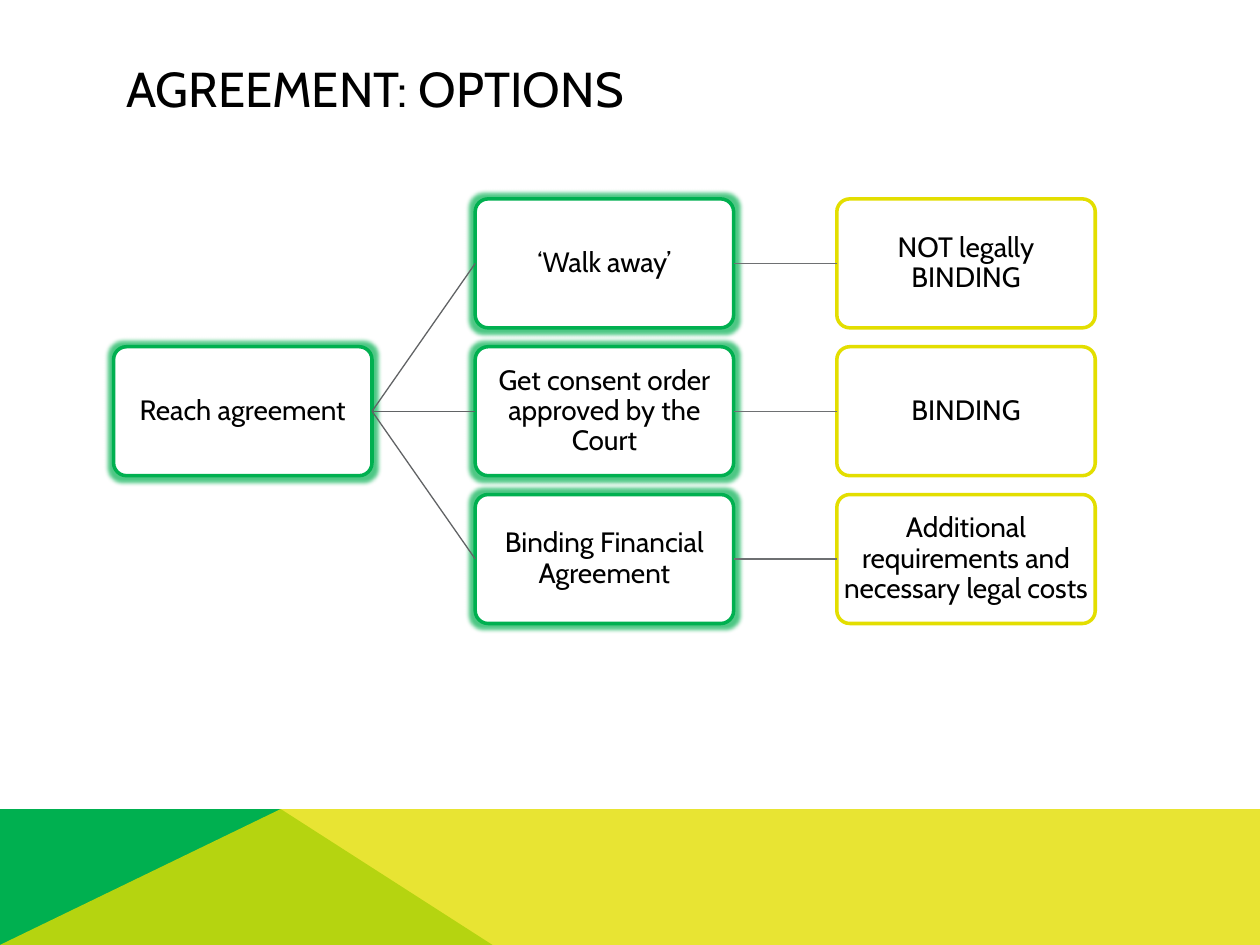
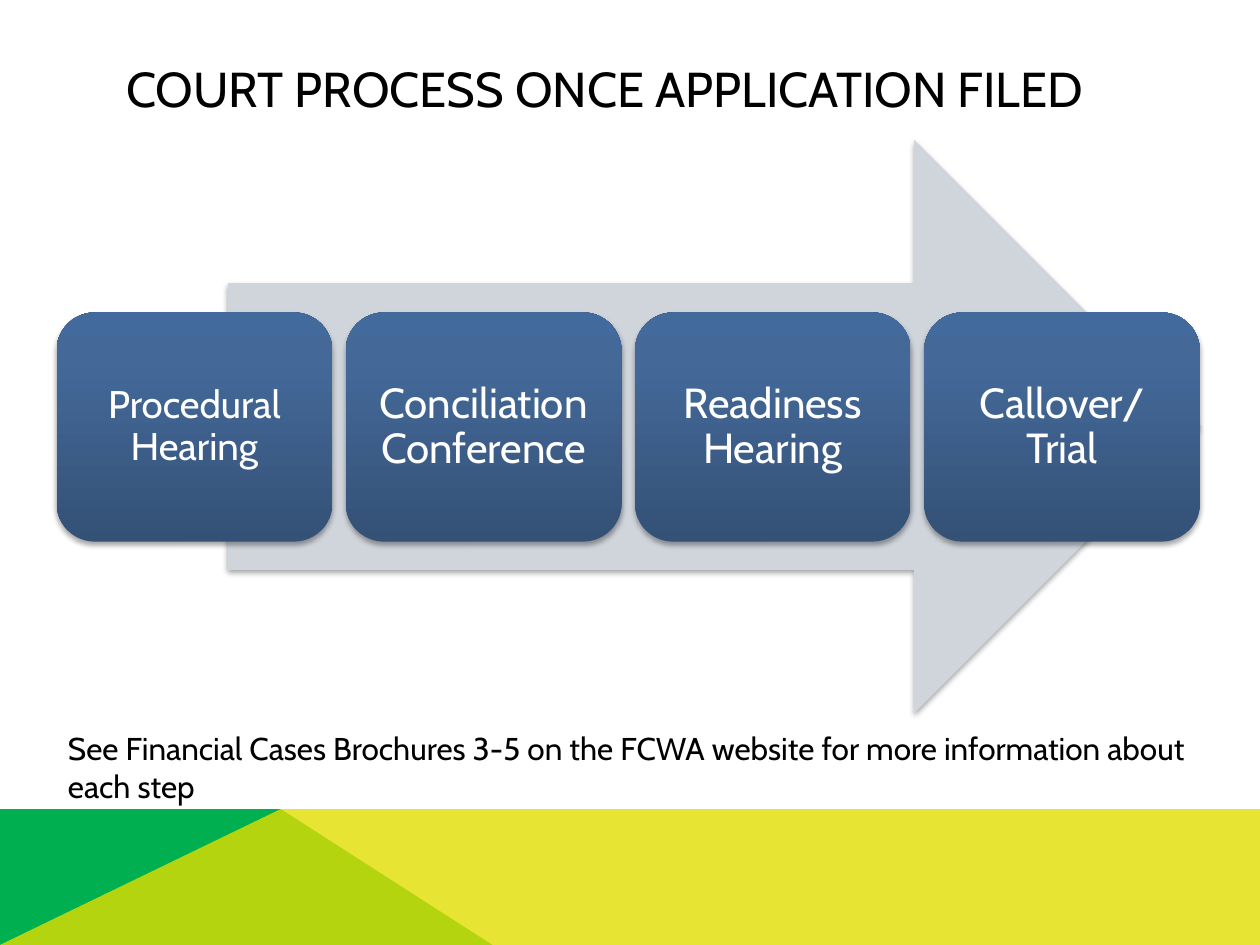
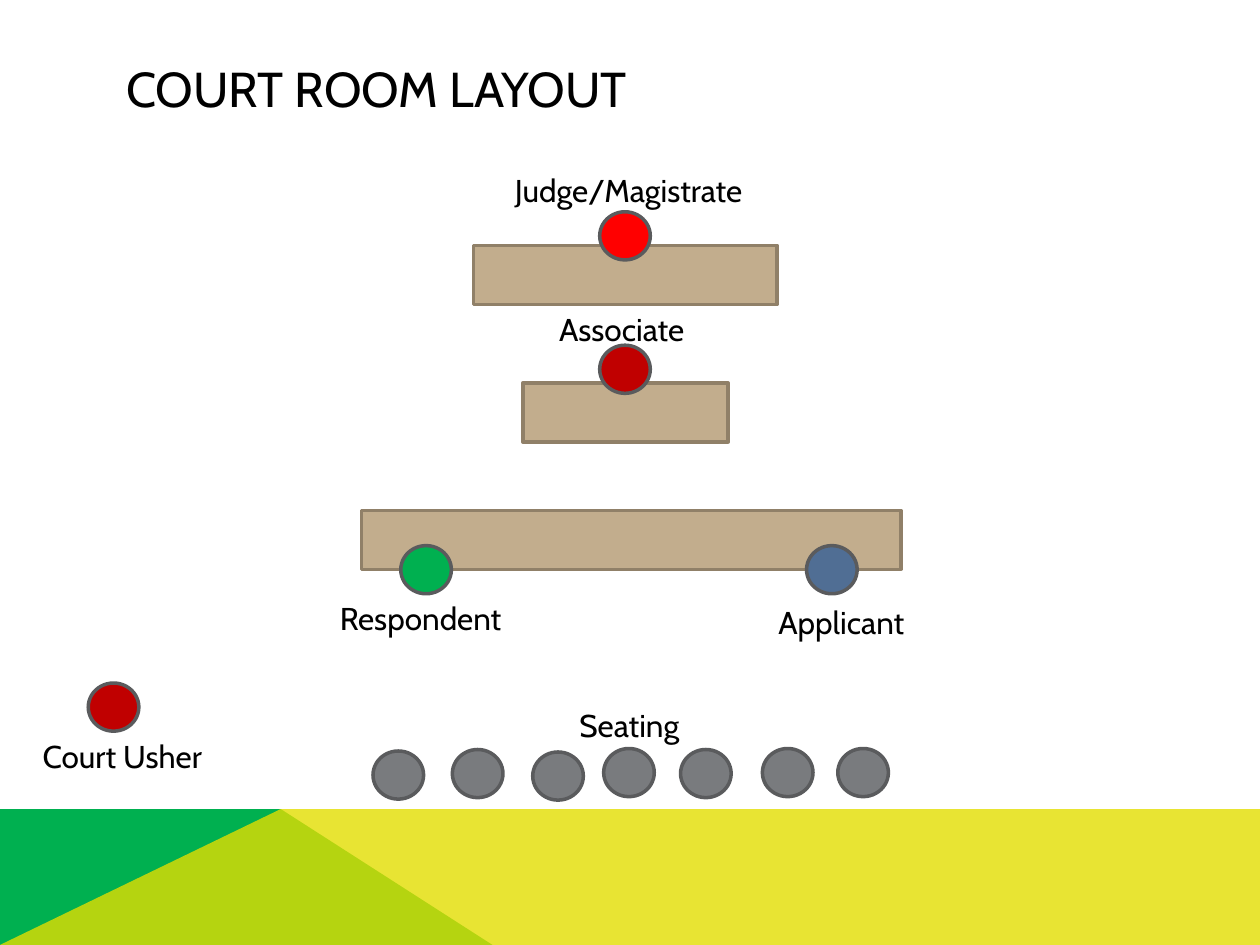
from copy import deepcopy
from dataclasses import dataclass

from pptx import Presentation
from pptx.dml.color import RGBColor
from pptx.enum.shapes import MSO_CONNECTOR, MSO_SHAPE
from pptx.enum.text import MSO_ANCHOR, MSO_AUTO_SIZE, PP_ALIGN
from pptx.oxml import parse_xml
from pptx.oxml.ns import nsdecls, qn
from pptx.util import Cm, Pt

ROUND, RECT = MSO_SHAPE.ROUNDED_RECTANGLE, MSO_SHAPE.RECTANGLE
OVAL, ARROW = MSO_SHAPE.OVAL, MSO_SHAPE.RIGHT_ARROW
STRAIGHT = MSO_CONNECTOR.STRAIGHT
LEFT, CENTER = PP_ALIGN.LEFT, PP_ALIGN.CENTER
TOP, MIDDLE = MSO_ANCHOR.TOP, MSO_ANCHOR.MIDDLE
GROW = MSO_AUTO_SIZE.SHAPE_TO_FIT_TEXT
WEST, EAST = 1, 3

FONT = "Cabin"
COLORS = {
    "black": "000000", "white": "FFFFFF", "green": "00B050",
    "yellow": "E3DE00", "fork": "616365", "link": "6E7072",
    "arrow": "D0D5DC", "wood": "C2AD8D", "edge": "908068",
    "red": "FF0000", "dark": "C00000", "blue": "506E94",
    "gray": "797B7E", "rim": "5A5B5D",
    "low": "345176", "mid": "446999", "high": "426A9C",
}
FADE = [(0, "low"), (0.8, "mid"), (1, "high")]

WIDTH, HEIGHT = 25.4, 19.05
BAND_TOP, PEAK, FOOT = 16.31, 5.66, 9.93


@dataclass(frozen=True)
class Box:
    left: float
    top: float
    width: float
    height: float

    def lengths(self):
        return Cm(self.left), Cm(self.top), Cm(self.width), Cm(self.height)


@dataclass(frozen=True)
class Route:
    choice: str
    result: str


@dataclass(frozen=True)
class Step:
    text: str
    size: int
    inset: float


@dataclass(frozen=True)
class Person:
    color: str
    left: float
    top: float


@dataclass(frozen=True)
class Label:
    text: str
    left: float
    top: float
    width: float = 4.93


TITLE = Box(2.29, 1.02, 20.88, 1.52)

ROUTES = [
    Route("‘Walk away’", "NOT legally BINDING"),
    Route("Get consent order approved by the Court", "BINDING"),
    Route("Binding Financial Agreement",
          "Additional requirements and necessary legal costs"),
]
STEPS = [
    Step("Procedural Hearing", 22, 0.23),
    Step("Conciliation Conference", 24, 0.25),
    Step("Readiness Hearing", 24, 0.25),
    Step("Callover/Trial", 24, 0.25),
]
DESKS = [
    Box(9.55, 4.95, 6.12, 1.19),
    Box(10.54, 7.72, 4.14, 1.19),
    Box(7.29, 10.29, 10.87, 1.19),
]
SEATS = [(7.52, 15.14), (9.12, 15.11), (10.74, 15.16), (12.17, 15.09),
         (13.72, 15.11), (15.37, 15.09), (16.89, 15.09)]
PEOPLE = [
    Person("red", 12.09, 4.27),
    Person("dark", 12.09, 6.96),
    Person("blue", 16.26, 11),
    Person("green", 8.08, 11),
    Person("dark", 1.78, 13.77),
] + [Person("gray", left, top) for left, top in SEATS]
LABELS = [
    Label("Judge/Magistrate", 10.13, 3.33, 6.12),
    Label("Associate", 11.02, 6.12),
    Label("Respondent", 6.6, 11.96),
    Label("Applicant", 15.44, 12.04),
    Label("Court Usher", 0.61, 14.73),
    Label("Seating", 11.43, 14.1),
]


def tint(name: str) -> RGBColor:
    return RGBColor.from_string(COLORS[name])


def write(frame, text: str, *, size=18, color="black", align=LEFT,
          anchor=TOP, spacing=1.0, inset=None) -> None:
    frame.text = text
    frame.word_wrap = True
    frame.vertical_anchor = anchor
    if inset is not None:
        frame.margin_left = frame.margin_right = Cm(inset)
        frame.margin_top = frame.margin_bottom = Cm(inset)
    para = frame.paragraphs[0]
    para.alignment = align
    para.line_spacing = spacing
    para.font.name = FONT
    para.font.size = Pt(size)
    para.font.color.rgb = tint(color)


def paint(shape, fill: str, line=None) -> None:
    shape.shadow.inherit = False
    shape.fill.solid()
    shape.fill.fore_color.rgb = tint(fill)
    if line:
        shape.line.color.rgb = tint(line)
        shape.line.width = Pt(2)
    else:
        shape.line.fill.background()


def draw(slide, kind, box: Box, fill: str, line=None):
    shape = slide.shapes.add_shape(kind, *box.lengths())
    paint(shape, fill, line)
    return shape


def effect(shape, tag: str, attrs: str, color: str, alpha: int) -> None:
    """Add a glow or shadow to the shape's empty effect list."""
    shape.element.spPr.find(qn("a:effectLst")).append(parse_xml(
        f'<a:{tag} {nsdecls("a")} {attrs}><a:srgbClr val="{COLORS[color]}">'
        f'<a:alpha val="{alpha * 1000}"/></a:srgbClr></a:{tag}>'))


def shade(shape) -> None:
    effect(shape, "outerShdw",
           'blurRad="40000" dist="23000" dir="5400000" rotWithShape="0"',
           "black", 35)


def fade(shape) -> None:
    """Fill the shape with the three-stop blend, dark at the bottom."""
    shape.fill.gradient()
    shape.fill.gradient_angle = 90
    stops = shape.element.spPr.find(".//" + qn("a:gsLst"))
    stops.append(deepcopy(stops[-1]))
    for stop, (place, color) in zip(shape.fill.gradient_stops, FADE):
        stop.position = place
        stop.color.rgb = tint(color)


def join(slide, start, end, color: str) -> None:
    line = slide.shapes.add_connector(STRAIGHT, 0, 0, 0, 0)
    line.begin_connect(start, EAST)
    line.end_connect(end, WEST)
    line.line.color.rgb = tint(color)
    line.line.width = Pt(0.75)
    line.element.spPr.append(parse_xml(f'<a:effectLst {nsdecls("a")}/>'))


def note(slide, text: str, box: Box) -> None:
    frame = slide.shapes.add_textbox(*box.lengths()).text_frame
    write(frame, text)
    frame.auto_size = GROW


def trace(slide, points, color: str):
    (left, top), *rest = [(Cm(x), Cm(y)) for x, y in points]
    pen = slide.shapes.build_freeform(left, top)
    pen.add_line_segments(rest, close=True)
    shape = pen.convert_to_shape()
    paint(shape, color)
    return shape


def add_bands(slide) -> None:
    """Draw the foot bands and move them to the layout all slides share."""
    layout = slide.slide_layout
    for holder in list(layout.placeholders)[1:]:
        holder.element.getparent().remove(holder.element)
    green = trace(slide, [(0, HEIGHT), (0, BAND_TOP), (PEAK, BAND_TOP),
                          (FOOT, HEIGHT)], "green")
    yellow = trace(slide, [(0, HEIGHT), (PEAK, BAND_TOP), (WIDTH, BAND_TOP),
                           (WIDTH, HEIGHT)], "yellow")
    color = yellow.element.spPr.find(".//" + qn("a:srgbClr"))
    color.append(parse_xml(f'<a:alpha {nsdecls("a")} val="80000"/>'))
    for place, band in enumerate((green, yellow), 2):
        layout.shapes.element.insert(place, band.element)


def start(deck, text: str):
    slide = deck.slides.add_slide(deck.slide_layouts[5])
    title = slide.shapes.title
    title.left, title.top, title.width, title.height = TITLE.lengths()
    write(title.text_frame, text, size=28, anchor=MIDDLE)
    return slide


def add_node(slide, text: str, col: int, row: int, line: str):
    box = Box(2.29 + 7.29 * col, 4.01 + 2.98 * row, 5.21, 2.6)
    node = draw(slide, ROUND, box, "white", line)
    node.adjustments[0] = 0.1
    write(node.text_frame, text, size=16, align=CENTER, anchor=MIDDLE,
          spacing=0.9, inset=0.03)
    if line == "green":
        effect(node, "glow", 'rad="63500"', line, 70)
    return node


def add_options(deck):
    slide = start(deck, "AGREEMENT: OPTIONS")
    root = add_node(slide, "Reach agreement", 0, 1, "green")
    for row, route in enumerate(ROUTES):
        choice = add_node(slide, route.choice, 1, row, "green")
        result = add_node(slide, route.result, 2, row, "yellow")
        join(slide, root, choice, "fork")
        join(slide, choice, result, "link")
    return slide


def add_process(deck) -> None:
    slide = start(deck, "COURT PROCESS ONCE APPLICATION FILED")
    shade(draw(slide, ARROW, Box(4.6, 2.82, 19.61, 11.56), "arrow"))
    for col, step in enumerate(STEPS):
        card = draw(slide, ROUND, Box(1.14 + 5.83 * col, 6.3, 5.56, 4.62),
                    "mid")
        fade(card)
        shade(card)
        write(card.text_frame, step.text, size=step.size, color="white",
              align=CENTER, anchor=MIDDLE, spacing=0.9, inset=step.inset)
    note(slide, "See Financial Cases Brochures 3-5 on the FCWA website for "
         "more information about each step", Box(1.12, 14.58, 23.06, 1.8))


def add_room(deck) -> None:
    slide = start(deck, "COURT ROOM LAYOUT")
    for desk in DESKS:
        draw(slide, RECT, desk, "wood", "edge")
    for person in PEOPLE:
        draw(slide, OVAL, Box(person.left, person.top, 1.02, 0.97),
             person.color, "rim")
    for label in LABELS:
        note(slide, label.text,
             Box(label.left, label.top, label.width, 1.02))


def main() -> None:
    deck = Presentation()
    deck.slide_width, deck.slide_height = Cm(WIDTH), Cm(HEIGHT)
    add_bands(add_options(deck))
    add_process(deck)
    add_room(deck)
    deck.save("out.pptx")


if __name__ == "__main__":
    main()
